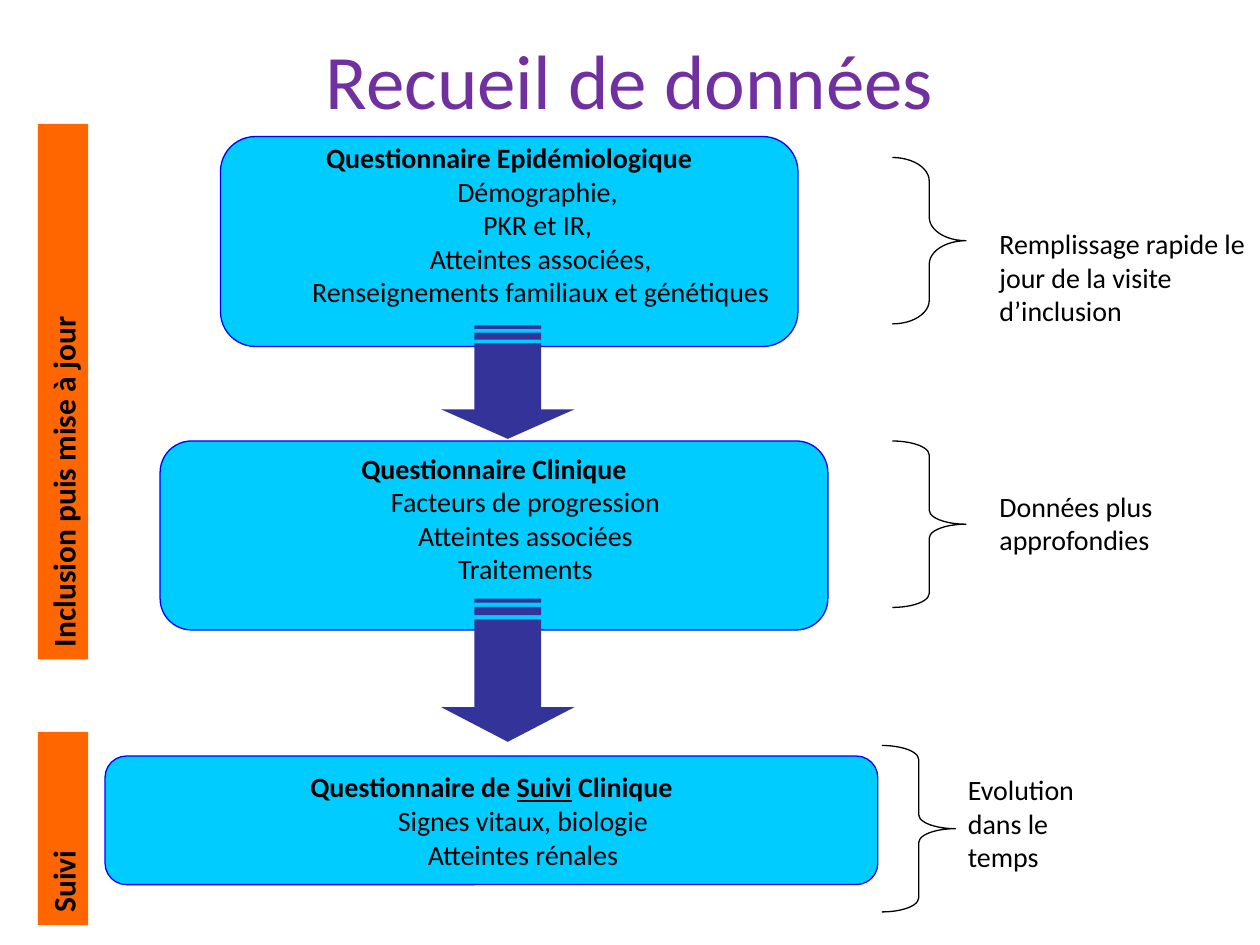
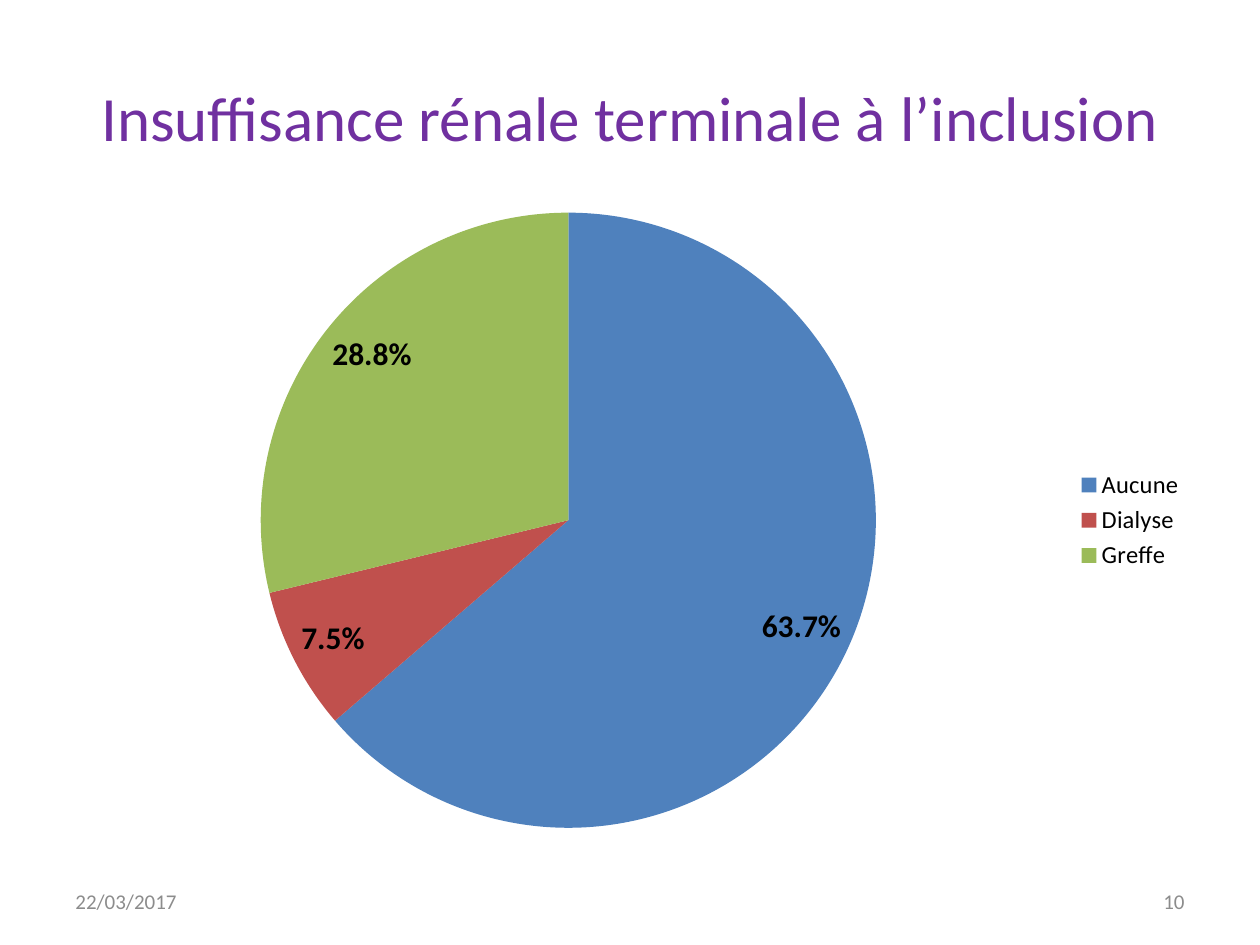
from dataclasses import dataclass
from typing import NamedTuple

from pptx import Presentation
from pptx.chart.data import CategoryChartData
from pptx.dml.color import RGBColor
from pptx.enum.chart import XL_CHART_TYPE, XL_LABEL_POSITION, XL_LEGEND_POSITION
from pptx.enum.shapes import MSO_SHAPE
from pptx.enum.text import MSO_ANCHOR, PP_ALIGN
from pptx.util import Emu, Inches, Pt

PIE = XL_CHART_TYPE.PIE
INSIDE_END = XL_LABEL_POSITION.INSIDE_END
LEGEND_RIGHT = XL_LEGEND_POSITION.RIGHT
PROCESS = MSO_SHAPE.FLOWCHART_ALTERNATE_PROCESS
STRIPED_ARROW = MSO_SHAPE.STRIPED_RIGHT_ARROW
BRACE = MSO_SHAPE.RIGHT_BRACE
RECTANGLE = MSO_SHAPE.RECTANGLE
MIDDLE, TOP = MSO_ANCHOR.MIDDLE, MSO_ANCHOR.TOP
LEFT, CENTER, RIGHT = PP_ALIGN.LEFT, PP_ALIGN.CENTER, PP_ALIGN.RIGHT

SLIDE_W, SLIDE_H = Inches(10), Inches(7.5)
COLUMNS, ROWS = 120, 90
TITLE_ONLY = 5


@dataclass(frozen=True)
class Theme:
    font: str = "Calibri"
    title: str = "7030A0"
    text: str = "000000"
    footer: str = "8C8C8C"
    box: str = "00CCFF"
    box_line: str = "0000FF"
    arrow: str = "333399"
    phase: str = "FF6600"
    slices: tuple[str, ...] = ("4F81BD", "C0504D", "9BBB59")
    flow_title_size: float = 44
    chart_title_size: float = 36
    body_size: float = 16
    strong_size: float = 18
    legend_size: float = 14
    footer_size: float = 12
    line_width: float = 0.75


THEME = Theme()


class Area(NamedTuple):
    """Left, top, width and height in grid columns and rows."""
    col: float
    row: float
    cols: float
    rows: float


class Questionnaire(NamedTuple):
    area: Area
    heading: tuple[str, ...]  # every second part is underlined
    topics: tuple[str, ...]
    free_lines: int  # lines kept clear below the text for the arrow


class Note(NamedTuple):
    brace: Area
    curve: float
    area: Area
    text: str


class Arrow(NamedTuple):
    row: float
    length: float


class Phase(NamedTuple):
    area: Area
    text: str


QUESTIONNAIRES = (
    Questionnaire(Area(21, 13, 55, 20), ("Questionnaire Epidémiologique",),
                  ("Démographie, ", "PKR et IR, ", "Atteintes associées,",
                   "Renseignements familiaux et génétiques"), 1),
    Questionnaire(Area(15.25, 42, 63.6, 18), ("Questionnaire Clinique",),
                  ("Facteurs de progression", "Atteintes associées", "Traitements"), 1),
    Questionnaire(Area(10, 72, 73.6, 12.25), ("Questionnaire de ", "Suivi", " Clinique"),
                  ("Signes vitaux, biologie", "Atteintes rénales"), 0),
)
ARROW_CENTER, ARROW_BREADTH = 48.36, 12.7
ARROWS = (Arrow(31, 10.8), Arrow(57, 13.65))
NOTES = (
    Note(Area(85, 15, 7, 15.85), 0.32, Area(94, 21, 26, 10.8),
         "Remplissage rapide le jour de la visite d’inclusion"),
    Note(Area(85, 42, 7, 15.85), 0.19, Area(94, 46, 26, 7.7),
         "Données plus approfondies"),
    Note(Area(84, 71, 7, 15.85), 0.19, Area(91, 73, 16.4, 10.8),
         "Evolution dans le temps"),
)
PHASES = (
    Phase(Area(3.6, 11.8, 4.8, 51), "Inclusion puis mise à jour"),
    Phase(Area(3.6, 69.7, 4.8, 18.4), "Suivi"),
)
RENAL_FAILURE = {"Aucune": 0.637, "Dialyse": 0.075, "Greffe": 0.288}


def rgb(color: str) -> RGBColor:
    return RGBColor.from_string(color)


def frame(area: Area) -> tuple[Emu, Emu, Emu, Emu]:
    """Turn grid units into slide lengths."""
    dx, dy = SLIDE_W / COLUMNS, SLIDE_H / ROWS
    return (Emu(round(area.col * dx)), Emu(round(area.row * dy)),
            Emu(round(area.cols * dx)), Emu(round(area.rows * dy)))


def style_font(font, size: float, color: str = THEME.text, bold: bool = False) -> None:
    font.name, font.size, font.bold = THEME.font, Pt(size), bold
    font.color.rgb = rgb(color)


def write(p, text: str, *, size: float = THEME.body_size, color: str = THEME.text,
          bold: bool = False, underline: bool = False, align=LEFT, indent: float = 0) -> None:
    """Append a formatted run to a paragraph; indent is in inches."""
    p.alignment = align
    if indent:
        p.level = 1
        pPr = p._p.get_or_add_pPr()
        pPr.set("marL", str(Inches(indent)))
        pPr.set("indent", "0")
    r = p.add_run()
    r.text = text
    style_font(r.font, size, color, bold)
    if underline:
        r.font.underline = True


def add_shape(slide, kind, area: Area, fill: str | None = None, line: str | None = None):
    sp = slide.shapes.add_shape(kind, *frame(area))
    sp.shadow.inherit = False
    if fill:
        sp.fill.solid()
        sp.fill.fore_color.rgb = rgb(fill)
    else:
        sp.fill.background()
    if line:
        sp.line.color.rgb = rgb(line)
        sp.line.width = Pt(THEME.line_width)
    else:
        sp.line.fill.background()
    return sp


def add_textbox(slide, area: Area, text: str, anchor=TOP, **text_format) -> None:
    tf = slide.shapes.add_textbox(*frame(area)).text_frame
    tf.word_wrap = True
    tf.vertical_anchor = anchor
    write(tf.paragraphs[0], text, **text_format)


def add_titled_slide(prs, title: str, row: float, size: float):
    slide = prs.slides.add_slide(prs.slide_layouts[TITLE_ONLY])
    sp = slide.shapes.title
    sp.left, sp.top, sp.width, sp.height = frame(Area(6, row, 108, 15))
    sp.text_frame.vertical_anchor = MIDDLE
    write(sp.text_frame.paragraphs[0], title, size=size, color=THEME.title, align=CENTER)
    return slide


def add_questionnaire(slide, item: Questionnaire) -> None:
    tf = add_shape(slide, PROCESS, item.area, THEME.box, THEME.box_line).text_frame
    tf.word_wrap = False
    tf.vertical_anchor = MIDDLE
    tf.margin_bottom = Inches(0.05 + 0.27 * item.free_lines)
    for i, part in enumerate(item.heading):
        write(tf.paragraphs[0], part, bold=True, underline=i % 2 == 1, align=CENTER)
    for topic in item.topics:
        write(tf.add_paragraph(), topic, align=CENTER, indent=0.5)


def add_down_arrow(slide, arrow: Arrow) -> None:
    """Turn a striped right arrow a quarter about its centre."""
    area = Area(ARROW_CENTER - arrow.length / 2,
                arrow.row + (arrow.length - ARROW_BREADTH) / 2,
                arrow.length, ARROW_BREADTH)
    sp = add_shape(slide, STRIPED_ARROW, area, THEME.arrow)
    sp.adjustments[0], sp.adjustments[1] = 0.5, 0.26
    sp.rotation = 90


def add_note(slide, note: Note) -> None:
    brace = add_shape(slide, BRACE, note.brace, line=THEME.text)
    brace.adjustments[0] = note.curve
    add_textbox(slide, note.area, note.text)


def add_phase(slide, phase: Phase) -> None:
    """Draw a band whose text reads upwards from its foot."""
    tf = add_shape(slide, RECTANGLE, phase.area, THEME.phase).text_frame
    tf.word_wrap = True
    tf.vertical_anchor = MIDDLE
    tf._txBody.bodyPr.set("vert", "vert270")
    write(tf.paragraphs[0], phase.text, size=THEME.strong_size, bold=True)


def add_pie(slide, area: Area, shares: dict[str, float]) -> None:
    data = CategoryChartData(number_format="0.0%")
    data.categories = list(shares)
    data.add_series("Series 1", list(shares.values()))
    chart = slide.shapes.add_chart(PIE, *frame(area), data).chart
    chart.has_title = False
    style_font(chart.font, 10)
    chart.has_legend = True
    chart.legend.position = LEGEND_RIGHT
    chart.legend.include_in_layout = False
    style_font(chart.legend.font, THEME.legend_size)

    plot = chart.plots[0]
    plot.vary_by_categories = True
    for i, color in enumerate(THEME.slices):
        fill = plot.series[0].points[i].format.fill
        fill.solid()
        fill.fore_color.rgb = rgb(color)
    plot.has_data_labels = True
    labels = plot.data_labels
    labels.show_value, labels.show_percentage = True, False
    labels.number_format, labels.number_format_is_linked = "0.0%", False
    labels.position = INSIDE_END
    style_font(labels.font, THEME.strong_size, bold=True)


def build_collection_slide(prs) -> None:
    slide = add_titled_slide(prs, "Recueil de données", 0, THEME.flow_title_size)
    for draw, items in ((add_questionnaire, QUESTIONNAIRES), (add_down_arrow, ARROWS),
                        (add_note, NOTES), (add_phase, PHASES)):
        for item in items:
            draw(slide, item)


def build_renal_failure_slide(prs) -> None:
    slide = add_titled_slide(prs, "Insuffisance rénale terminale à l’inclusion", 3.6,
                             THEME.chart_title_size)
    for col, text, align in ((6, "22/03/2017", LEFT), (86, "10", RIGHT)):
        add_textbox(slide, Area(col, 83.4, 28, 4.8), text, MIDDLE,
                    size=THEME.footer_size, color=THEME.footer, align=align)
    add_pie(slide, Area(6, 18.6, 108, 61.9), RENAL_FAILURE)


def main() -> None:
    prs = Presentation()
    prs.slide_width, prs.slide_height = SLIDE_W, SLIDE_H
    build_collection_slide(prs)
    build_renal_failure_slide(prs)
    prs.save("out.pptx")


if __name__ == "__main__":
    main()
